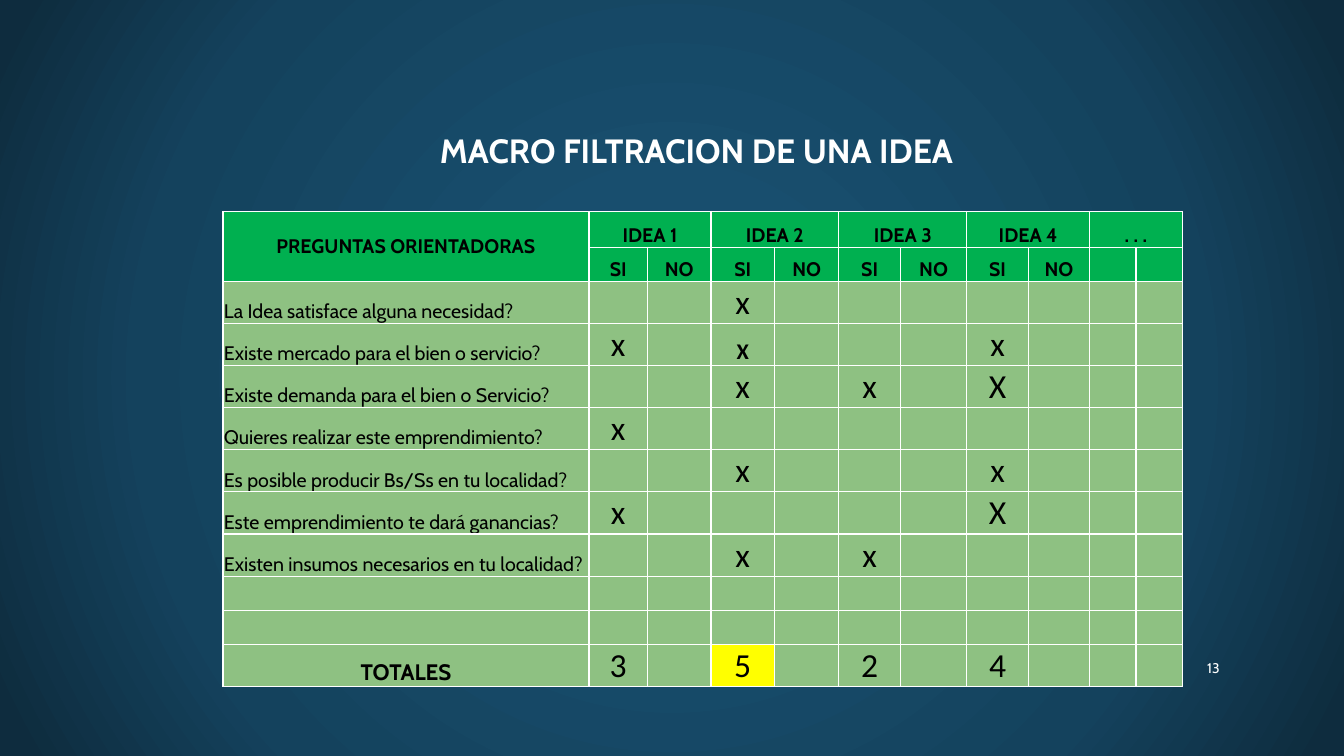
from pptx import Presentation
from pptx.dml.color import RGBColor
from pptx.enum.text import MSO_ANCHOR, PP_ALIGN
from pptx.oxml import parse_xml
from pptx.oxml.ns import nsdecls
from pptx.util import Pt

COLORS = {
    "white": "FFFFFF", "black": "000000", "header": "00B050",
    "body": "8EC182", "winner": "FFFF00",
    "glow": "184E6E", "mid": "14425D", "edge": "0E2C3E",
}
BACKDROP = [(0, "glow"), (23, "glow"), (69, "mid"), (97, "edge")]

COLUMNS = [261.4, 41.8, 45.4, 45.4, 46.0, 43.9, 47.5, 43.9, 43.9, 33.1, 33.1]
IDEAS = ["IDEA 1", "IDEA 2", "IDEA 3", "IDEA 4", ". . ."]
# Each question with the mark that every idea gets under SI
QUESTIONS = [
    ("La Idea satisface alguna necesidad?", {2: "x"}),
    ("Existe mercado para el bien o servicio?", {1: "x", 2: "X", 4: "x"}),
    ("Existe demanda para el bien o Servicio?", {2: "x", 3: "x", 4: "X"}),
    ("Quieres realizar este emprendimiento?", {1: "x"}),
    ("Es posible producir Bs/Ss en tu localidad?", {2: "x", 4: "x"}),
    ("Este emprendimiento te dará ganancias?", {1: "x", 4: "X"}),
    ("Existen insumos necesarios en tu localidad?", {2: "x", 3: "x"}),
]
TOTALS = {1: "3", 2: "5", 3: "2", 4: "4"}
BLANK_ROWS = 2
ROWS = [25.7, 24.3] + [30.1] * len(QUESTIONS) + [24.3] * BLANK_ROWS + [30.1]

LABEL = {"name": "Cabin", "size": Pt(14), "bold": False}
HEADING = {**LABEL, "bold": True}
TOTAL_LABEL = {**HEADING, "size": Pt(16)}
MARK = {"name": "Calibri", "size": Pt(24), "bold": False}
SMALL_MARK = {**MARK, "size": Pt(16), "bold": True}
TITLE = {"name": "Cabin", "size": Pt(24), "bold": True}
NUMBER = {"name": "Cabin", "size": Pt(10), "bold": False}


class Slide:
    """Holds the current page and draws styled elements on it."""

    def __init__(self, page):
        self.page = page

    def background(self, stops):
        marks = "".join(
            f'<a:gs pos="{pos * 1000}"><a:srgbClr val="{COLORS[color]}"/></a:gs>'
            for pos, color in stops)
        self.page.element.cSld.insert(0, parse_xml(
            f'<p:bg {nsdecls("p", "a")}><p:bgPr><a:gradFill rotWithShape="1">'
            f'<a:gsLst>{marks}</a:gsLst><a:path path="circle">'
            '<a:fillToRect l="50000" t="50000" r="50000" b="50000"/></a:path>'
            '</a:gradFill><a:effectLst/></p:bgPr></p:bg>'))

    def add_span(self, frame, text, style, color, align):
        para = frame.paragraphs[0]
        para.alignment = align
        span = para.add_run()
        span.text = text
        for name, value in style.items():
            setattr(span.font, name, value)
        span.font.color.rgb = RGBColor.from_string(COLORS[color])

    def text(self, place, text, style, align, anchor=MSO_ANCHOR.TOP):
        box = self.page.shapes.add_textbox(*map(Pt, place))
        box.text_frame.word_wrap = True
        box.text_frame.vertical_anchor = anchor
        self.add_span(box.text_frame, text, style, "white", align)

    def table(self, left, top, columns, rows):
        frame = self.page.shapes.add_table(
            len(rows), len(columns), Pt(left), Pt(top), Pt(sum(columns)), Pt(sum(rows)))
        grid = frame.table
        grid.first_row = grid.horz_banding = False
        for column, width in zip(grid.columns, columns):
            column.width = Pt(width)
        for row, height in zip(grid.rows, rows):
            row.height = Pt(height)
        return grid

    def plain_cell(self, cell, fill):
        cell.margin_left = cell.margin_right = cell.margin_top = Pt(0.7)
        cell.margin_bottom = 0
        cell.vertical_anchor = MSO_ANCHOR.BOTTOM
        for side in ("lnL", "lnR", "lnT", "lnB"):
            cell._tc.get_or_add_tcPr().append(parse_xml(
                f'<a:{side} {nsdecls("a")} w="{Pt(1)}"><a:solidFill>'
                f'<a:srgbClr val="{COLORS["white"]}"/></a:solidFill></a:{side}>'))
        self.paint(cell, fill)

    def paint(self, cell, fill):
        cell.fill.solid()
        cell.fill.fore_color.rgb = RGBColor.from_string(COLORS[fill])

    def fill_cell(self, cell, text, style, align=PP_ALIGN.CENTER):
        self.add_span(cell.text_frame, text, style, "black", align)


def main():
    deck = Presentation()
    deck.slide_width, deck.slide_height = Pt(960), Pt(540)
    slide = Slide(deck.slides.add_slide(deck.slide_layouts[6]))
    slide.background(BACKDROP)

    # Grid
    grid = slide.table(159.3, 151, COLUMNS, ROWS)
    for row in range(len(ROWS)):
        for column in range(len(COLUMNS)):
            slide.plain_cell(grid.cell(row, column), "header" if row < 2 else "body")

    # Two header rows
    corner = grid.cell(0, 0)
    corner.merge(grid.cell(1, 0))
    corner.vertical_anchor = MSO_ANCHOR.MIDDLE
    slide.fill_cell(corner, "PREGUNTAS ORIENTADORAS", HEADING)
    for idea, name in enumerate(IDEAS, 1):
        yes, no = 2 * idea - 1, 2 * idea
        grid.cell(0, yes).merge(grid.cell(0, no))
        slide.fill_cell(grid.cell(0, yes), name, HEADING)
        if idea in TOTALS:
            slide.fill_cell(grid.cell(1, yes), "SI", HEADING)
            slide.fill_cell(grid.cell(1, no), "NO", HEADING)

    # Questions and their marks
    for row, (question, marks) in enumerate(QUESTIONS, 2):
        slide.fill_cell(grid.cell(row, 0), question, LABEL, PP_ALIGN.LEFT)
        for idea, mark in marks.items():
            style = SMALL_MARK if (idea, mark) == (2, "X") else MARK
            slide.fill_cell(grid.cell(row, 2 * idea - 1), mark, style)

    # Totals, with the best idea highlighted
    last = len(ROWS) - 1
    slide.fill_cell(grid.cell(last, 0), "TOTALES", TOTAL_LABEL)
    for idea, total in TOTALS.items():
        slide.fill_cell(grid.cell(last, 2 * idea - 1), total, MARK)
    best = max(TOTALS, key=lambda idea: int(TOTALS[idea]))
    slide.paint(grid.cell(last, 2 * best - 1), "winner")

    # Title and page number
    slide.text((222.5, 89.3, 550, 36), "MACRO FILTRACION DE UNA IDEA", TITLE, PP_ALIGN.CENTER)
    slide.text((835.2, 462.2, 43.2, 29.5), "13", NUMBER, PP_ALIGN.RIGHT, MSO_ANCHOR.MIDDLE)

    deck.save("out.pptx")


if __name__ == "__main__":
    main()
